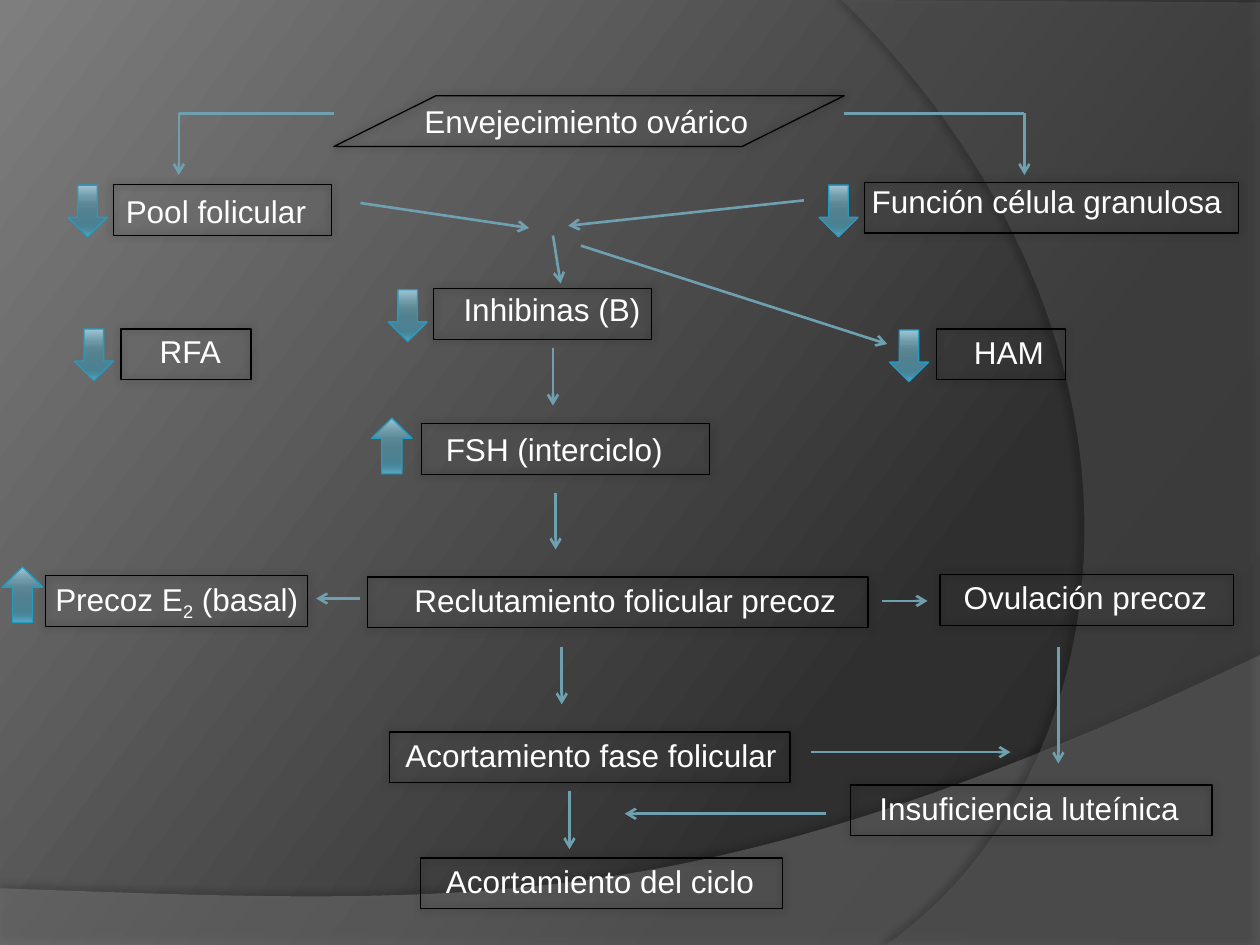
from lxml.etree import SubElement
from pptx import Presentation
from pptx.dml.color import RGBColor
from pptx.enum.shapes import MSO_CONNECTOR, MSO_SHAPE as SHAPE
from pptx.enum.text import MSO_AUTO_SIZE
from pptx.oxml.ns import qn
from pptx.util import Pt

rgb = RGBColor.from_string


def set_gradient(element, stops, angle):
    """Replace the stops and angle of the gradient inside an element."""
    gradient = element.find(".//" + qn("a:gradFill"))
    stop_list = gradient.find(qn("a:gsLst"))
    for old_stop in list(stop_list):
        stop_list.remove(old_stop)
    for position, color in stops:
        stop = SubElement(stop_list, qn("a:gs"), pos=str(position * 1000))
        SubElement(stop, qn("a:srgbClr"), val=color)
    gradient.find(qn("a:lin")).set("ang", str(angle * 60000))


def add_shadow(shape, alpha, blur, distance, direction):
    """Give a shape a soft black shadow."""
    shape.shadow.inherit = False
    effects = shape.element.spPr.find(qn("a:effectLst"))
    shadow = SubElement(effects, qn("a:outerShdw"), blurRad=str(Pt(blur)),
                        dist=str(Pt(distance)), dir=str(direction * 60000),
                        algn="ctr", rotWithShape="0")
    color = SubElement(shadow, qn("a:srgbClr"), val="000000")
    SubElement(color, qn("a:alpha"), val=str(alpha * 1000))


prs = Presentation()
prs.slide_width, prs.slide_height = Pt(720), Pt(540)
slide = prs.slides.add_slide(prs.slide_layouts[6])
shapes = slide.shapes

# Background
slide.background.fill.gradient()
set_gradient(slide.element, [(0, "282828"), (30, "2F2F2F"), (100, "7E7E7E")], 217)

# Background sweeps: straight corners, then a Bezier curve from the last corner
sweeps = [
    ([(0, 507.6), (0, 540), (720, 540), (720, 374.4)],
     [(402.5, 524.9), (281.5, 517.7), (0, 507.6)], "7F7F7F", 45, (35, 4, 3.5, 270)),
    ([(720, 1.4), (720, 540), (506.2, 540)],
     [(641.5, 445.7), (681.8, 198), (481, 0)], "5E5E5E", 40, (45, 4, 4, 180)),
]
STEPS = 60
for corners, controls, color, alpha, shadow in sweeps:
    curve = [corners[-1]] + controls
    points = corners[1:]
    for step in range(1, STEPS + 1):
        t = step / STEPS
        weights = ((1 - t) ** 3, 3 * t * (1 - t) ** 2, 3 * t ** 2 * (1 - t), t ** 3)
        points.append([sum(w * p[axis] for w, p in zip(weights, curve))
                       for axis in (0, 1)])
    builder = shapes.build_freeform(Pt(corners[0][0]), Pt(corners[0][1]))
    builder.add_line_segments([(Pt(x), Pt(y)) for x, y in points], close=True)
    sweep = builder.convert_to_shape()
    sweep.fill.solid()
    sweep.fill.fore_color.rgb = rgb(color)
    fill_color = sweep.element.spPr.find(qn("a:solidFill"))[0]
    SubElement(fill_color, qn("a:alpha"), val=str(alpha * 1000))
    sweep.line.fill.background()
    add_shadow(sweep, *shadow)

# Labels and their frames: text, label (left, top, width), frame (left, top, width)
# A part between bars is a subscript
ROW_HEIGHT = 29
steps = [
    ("Envejecimiento ovárico", (235.4, 54.7, 214.6), (190.8, 54.7, 291.6)),
    ("Pool folicular", (64.8, 106, 124.6), (64.8, 105.6, 124.6)),
    ("Función célula granulosa", (491, 100.4, 215.3), (494, 104.2, 213.8)),
    ("RFA", (84.2, 186, 56.9), (69.2, 188, 74.2)),
    ("Inhibinas (B)", (257.8, 162.2, 124.6), (247.7, 164.9, 124.6)),
    ("HAM", (549.4, 186.5, 70.6), (535.3, 188, 73.4)),
    ("FSH (interciclo)", (247.7, 242, 153.4), (240.7, 242, 164.9)),
    ("Reclutamiento folicular precoz", (229.7, 328.5, 329), (210.2, 329.7, 285.8)),
    ("Precoz E|2| (basal)", (24.5, 327.6, 164.2), (25.9, 329, 149.8)),
    ("Ovulación precoz", (543.6, 327, 169.9), (537.1, 328.3, 167.8)),
    ("Acortamiento fase folicular", (224.6, 417, 238.3), (222.5, 418.3, 229)),
    ("Insuficiencia luteínica", (495.4, 447.1, 195.1), (486, 448.6, 206.6)),
    ("Acortamiento del ciclo", (247.7, 488.9, 238.3), (240.5, 490.3, 206.6)),
]
for text, (left, top, width), _ in steps:
    label = shapes.add_textbox(Pt(left), Pt(top), Pt(width), Pt(ROW_HEIGHT))
    frame = label.text_frame
    frame.word_wrap = True
    frame.auto_size = MSO_AUTO_SIZE.SHAPE_TO_FIT_TEXT
    for number, part in enumerate(text.split("|")):
        run = frame.paragraphs[0].add_run()
        run.text = part
        run.font.name, run.font.size = "Arial", Pt(18)
        run.font.color.rgb = rgb("FFFFFF")
        if number == 1:
            run.font._element.set("baseline", "-25000")

for number, (_, _, (left, top, width)) in enumerate(steps):
    kind = SHAPE.FLOWCHART_PROCESS if number else SHAPE.FLOWCHART_DATA
    box = shapes.add_shape(kind, Pt(left), Pt(top), Pt(width), Pt(ROW_HEIGHT))
    box.fill.background()
    box.line.color.rgb = rgb("000000")
    box.line.width = Pt(0.75)
    add_shadow(box, 45, 5, 0, 0)

# Flow lines: start, end, arrowhead
flows = [
    ((190.8, 64.8), (102.2, 64.8), False),
    ((482.4, 64.8), (585.4, 64.8), False),
    ((585.4, 64.8), (585.4, 100), True),
    ((102.2, 64.8), (102.2, 100), True),
    ((206, 116), (302.4, 130.3), True),
    ((459.4, 114.5), (324.7, 129), True),
    ((316, 134.6), (320.4, 162), True),
    ((332, 140.4), (507, 196.6), True),
    ((316, 198.7), (316, 231.8), True),
    ((317.5, 281.5), (317.5, 314), True),
    ((321, 370), (321, 402.5), True),
    ((325.4, 452.2), (325.4, 485.3), True),
    ((206, 342), (180.7, 342), True),
    ((504, 343.4), (530, 343.4), True),
    ((604.8, 370), (604.8, 436.3), True),
    ((463.7, 429.8), (577.4, 429.8), True),
    ((472.3, 465), (357, 465), True),
]
for start, end, has_head in flows:
    flow = shapes.add_connector(MSO_CONNECTOR.STRAIGHT, *map(Pt, start + end))
    flow.line.color.rgb = rgb("6EA0B0")
    flow.line.width = Pt(1.5)
    if has_head:
        SubElement(flow.line._get_or_add_ln(), qn("a:tailEnd"), type="arrow")
    SubElement(flow.element.spPr, qn("a:effectLst"))

# Rise and fall markers
marker_stops = [(0, "9EC4D2"), (25, "6C97A5"), (38, "5B8694"), (55, "51808F"),
                (80, "4A8294"), (88, "4A8BA0"), (100, "5DAAC2")]
rise = (SHAPE.UP_ARROW, 23, 31.7)
fall = (SHAPE.DOWN_ARROW, 22.3, 29.5)
markers = [
    (rise, 212.4, 239), (rise, 1.4, 324),
    (fall, 38.9, 105.8), (fall, 42.5, 188), (fall, 468, 105.8),
    (fall, 508.3, 188.6), (fall, 221.8, 165.6),
]
for (kind, width, height), left, top in markers:
    marker = shapes.add_shape(kind, Pt(left), Pt(top), Pt(width), Pt(height))
    marker.fill.gradient()
    set_gradient(marker.element, marker_stops, 90)
    marker.line.color.rgb = rgb("239BC2")
    marker.line.width = Pt(0.75)
    marker.shadow.inherit = False

prs.save("out.pptx")
